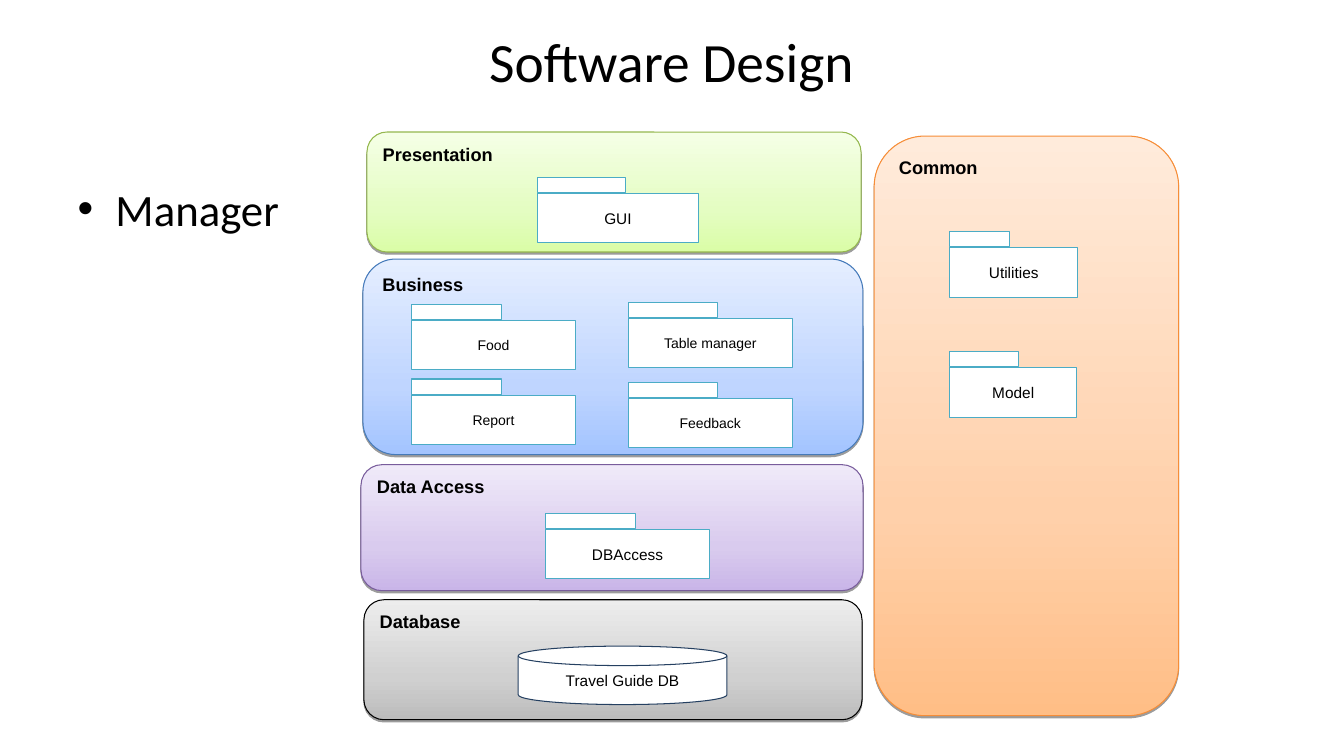
from copy import deepcopy

from pptx import Presentation
from pptx.dml.color import RGBColor
from pptx.enum.shapes import MSO_SHAPE as Shape
from pptx.enum.text import MSO_ANCHOR as Anchor, PP_ALIGN as Align
from pptx.oxml import parse_xml
from pptx.oxml.ns import nsdecls, qn
from pptx.util import Inches, Pt

COLORS = {"text": "000000", "paper": "FFFFFF", "package": "4BACC6", "disk": "254061"}

# Gradient from bottom to top, then the outline
LAYER_COLORS = {
    "Data Access": ("C9B5E8", "D9CBEE", "F0EAF9", "795D9C"),
    "Database": ("BCBCBC", "D0D0D0", "EDEDED", "000000"),
    "Presentation": ("DAFDA7", "E4FDC2", "F5FFE6", "95B74F"),
    "Common": ("FFBE86", "FFD0AA", "FFEBDB", "F68D37"),
    "Business": ("A3C4FF", "BFD5FF", "E5EEFF", "457AB9"),
}
GRADIENT_STOPS = (0, 0.35, 1)

# Name, layer box (left, top, width, height), label size of its packages,
# packages (name, left, top, width, tab width)
LAYERS = [
    ("Data Access", (3.58, 4.61, 4.98, 1.25), 11, [("DBAccess", 5.41, 5.25, 1.63, 0.89)]),
    ("Database", (3.61, 5.95, 4.94, 1.19), 11, []),
    ("Presentation", (3.64, 1.31, 4.9, 1.19), 11, [("GUI", 5.33, 1.92, 1.6, 0.87)]),
    ("Common", (8.67, 1.35, 3.02, 5.75), 11, [
        ("Utilities", 9.42, 2.46, 1.27, 0.59),
        ("Model", 9.42, 3.65, 1.26, 0.68),
    ]),
    ("Business", (3.6, 2.57, 4.96, 1.94), 10, [
        ("Food", 4.08, 3.18, 1.63, 0.89),
        ("Report", 4.08, 3.92, 1.63, 0.89),
        ("Feedback", 6.23, 3.95, 1.63, 0.89),
        ("Table manager", 6.23, 3.16, 1.63, 0.89),
    ]),
]
PACKAGE_HEIGHT = 0.49
TAB_HEIGHT = 0.15
TAB_RISE = 0.16


def rgb(value):
    return RGBColor.from_string(value)


def place(shape, left, top, width, height):
    shape.left, shape.top = Inches(left), Inches(top)
    shape.width, shape.height = Inches(width), Inches(height)


def format_text(shape, font, size, bold=False):
    for span in shape.text_frame.paragraphs[0].runs:
        span.font.name = font
        span.font.size = Pt(size)
        span.font.bold = bold
        span.font.color.rgb = rgb(COLORS["text"])


def add_box(group, kind, bounds, line):
    box = group.shapes.add_shape(kind, *map(Inches, bounds))
    box.shadow.inherit = False
    box.fill.solid()
    box.fill.fore_color.rgb = rgb(COLORS["paper"])
    box.line.color.rgb = rgb(line)
    box.line.width = Pt(0.75)
    return box


def add_label(box, text, size, bold=False, align=Align.CENTER, anchor=Anchor.MIDDLE):
    box.text_frame.text = text
    box.text_frame.vertical_anchor = anchor
    box.text_frame.paragraphs[0].alignment = align
    format_text(box, "Arial", size, bold)


def fill_gradient(box, colors):
    box.fill.gradient()
    box.fill.gradient_angle = 90
    stop_list = box._element.spPr.find(qn("a:gradFill")).find(qn("a:gsLst"))
    stop_list.append(deepcopy(stop_list[-1]))
    for stop, position, color in zip(box.fill.gradient_stops, GRADIENT_STOPS, colors):
        stop.position = position
        stop.color.rgb = rgb(color)


def add_shadow(box):
    effects = box._element.spPr.find(qn("a:effectLst"))
    effects.append(parse_xml(
        f'<a:outerShdw {nsdecls("a")} blurRad="0" dist="{Pt(1.6)}" dir="5400000" '
        'rotWithShape="0"><a:srgbClr val="000000"><a:alpha val="38000"/>'
        '</a:srgbClr></a:outerShdw>'))


def add_layer(slide, name, bounds):
    *gradient, outline = LAYER_COLORS[name]
    group = slide.shapes.add_group_shape()
    box = add_box(group, Shape.ROUNDED_RECTANGLE, bounds, outline)
    fill_gradient(box, gradient)
    add_shadow(box)
    add_label(box, name, 13, True, Align.LEFT, Anchor.TOP)
    return group


def add_uml_package(group, name, left, top, width, tab_width, size):
    body = add_box(group, Shape.RECTANGLE, (left, top, width, PACKAGE_HEIGHT),
                   COLORS["package"])
    add_label(body, name, size)
    add_box(group, Shape.RECTANGLE, (left, top - TAB_RISE, tab_width, TAB_HEIGHT),
            COLORS["package"])


def add_database(group, name, bounds):
    disk = add_box(group, Shape.FLOWCHART_MAGNETIC_DISK, bounds, COLORS["disk"])
    add_label(disk, name, 11)


def fill_placeholders(slide):
    title, body = slide.shapes.title, slide.placeholders[1]
    place(title, 0.66, 0.27, 12, 1.25)
    title.text_frame.text = "Software Design"
    title.text_frame.vertical_anchor = Anchor.TOP
    title.text_frame.margin_top = 0
    format_text(title, "Calibri", 39.6)

    place(body, 0.67, 1.75, 12, 4.95)
    body.text_frame.text = "Manager"
    format_text(body, "Calibri", 32)


def main():
    deck = Presentation()
    deck.slide_width, deck.slide_height = Inches(13.33), Inches(7.5)
    slide = deck.slides.add_slide(deck.slide_layouts[1])
    fill_placeholders(slide)

    # Architecture layers with their packages
    for name, bounds, size, packages in LAYERS:
        group = add_layer(slide, name, bounds)
        for item in packages:
            add_uml_package(group, *item, size)
        if name == "Database":
            add_database(group, "Travel Guide DB", (5.14, 6.41, 2.07, 0.58))

    deck.save("out.pptx")


if __name__ == "__main__":
    main()
